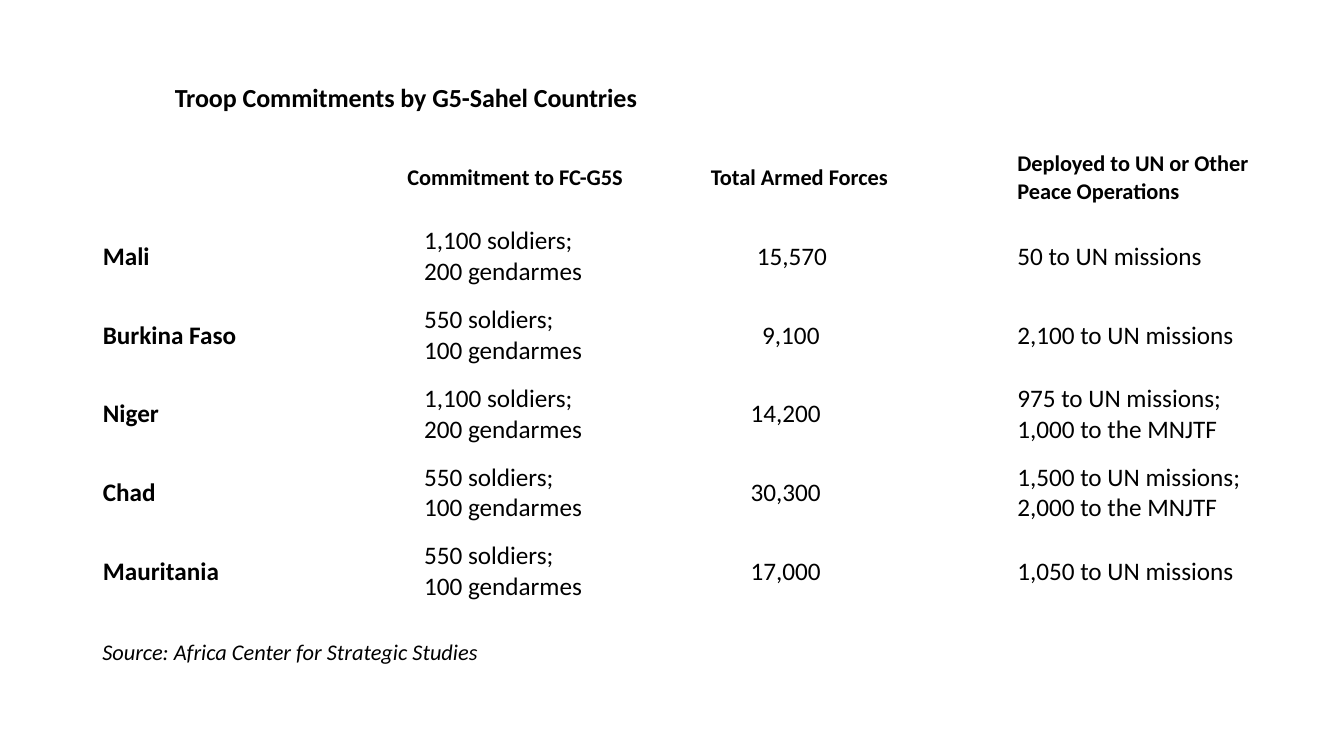
from pptx import Presentation
from pptx import util as u
from pptx.dml.color import RGBColor
from pptx.enum import text

BLACK = RGBColor(0x00, 0x00, 0x00)
FONT = "Calibri"
INSET = 10

COLUMN_WIDTHS = [290, 289, 292, 290]
ROW_HEIGHT = 75
COMMITMENT_INDENT = 16

HEADINGS = ["", "Commitment to FC-G5S", "Total Armed Forces",
            "Deployed to UN or Other\nPeace Operations"]
LARGE = "1,100 soldiers;\n200 gendarmes"
SMALL = "550 soldiers;\n100 gendarmes"
# country, commitment, total forces, indent of the total, deployed elsewhere
COUNTRIES = [
    ("Mali", LARGE, "15,570", 44, "50 to UN missions"),
    ("Burkina Faso", SMALL, "9,100", 49, "2,100 to UN missions"),
    ("Niger", LARGE, "14,200", 38, "975 to UN missions;\n1,000 to the MNJTF"),
    ("Chad", SMALL, "30,300", 38, "1,500 to UN missions;\n2,000 to the MNJTF"),
    ("Mauritania", SMALL, "17,000", 38, "1,050 to UN missions"),
]


def px(length):
    return u.Emu(length * 9525)


def write(frame, words, size=18, bold=False, italic=False, baseline=0):
    """Fill the first paragraph; baseline is a shift in percent of the size."""
    para = frame.paragraphs[0]
    for index, line in enumerate(words.split("\n")):
        if index:
            para.add_line_break()
        span = para.add_run()
        span.text = line
        span.font.name = FONT
        span.font.size = u.Pt(size)
        span.font.bold = bold
        span.font.italic = italic
        span.font.color.rgb = BLACK
        if baseline:
            span._r.get_or_add_rPr().set("baseline", str(baseline * 1000))


class Page:
    def __init__(self, deck):
        self.shapes = deck.slides.add_slide(deck.slide_layouts[6]).shapes

    def label(self, words, left, top, width, height, **style):
        box = self.shapes.add_textbox(px(left), px(top), px(width), px(height))
        box.text_frame.word_wrap = True
        write(box.text_frame, words, **style)

    def table(self, left, top, widths, row_height, row_count):
        frame = self.shapes.add_table(
            row_count, len(widths), px(left), px(top),
            px(sum(widths)), px(row_height * row_count))
        table = frame.table
        table.first_row = table.horz_banding = False
        for column, width in zip(table.columns, widths):
            column.width = px(width)
        return table

    def cell(self, table, row, column, words, indent=0, **style):
        cell = table.cell(row, column)
        cell.fill.background()
        cell.vertical_anchor = text.MSO_ANCHOR.MIDDLE
        cell.margin_left = px(INSET + indent)
        if words:
            write(cell.text_frame, words, **style)


def main():
    deck = Presentation()
    deck.slide_width, deck.slide_height = px(1280), px(720)
    page = Page(deck)

    table = page.table(88, 132, COLUMN_WIDTHS, ROW_HEIGHT, len(COUNTRIES) + 1)
    for column, heading in enumerate(HEADINGS):
        page.cell(table, 0, column, heading, size=16, bold=True)
    for row, (country, commitment, total, indent, deployed) in enumerate(COUNTRIES, 1):
        page.cell(table, row, 0, country, bold=True)
        page.cell(table, row, 1, commitment, indent=COMMITMENT_INDENT)
        page.cell(table, row, 2, total, indent=indent)
        page.cell(table, row, 3, deployed)

    page.label("Source: Africa Center for Strategic Studies", 88, 603, 459, 36,
               size=16, italic=True)
    page.label("Troop Commitments by G5-Sahel Countries", 157, 44, 612, 61,
               size=32, bold=True, baseline=-25)
    deck.save("out.pptx")


if __name__ == "__main__":
    main()
